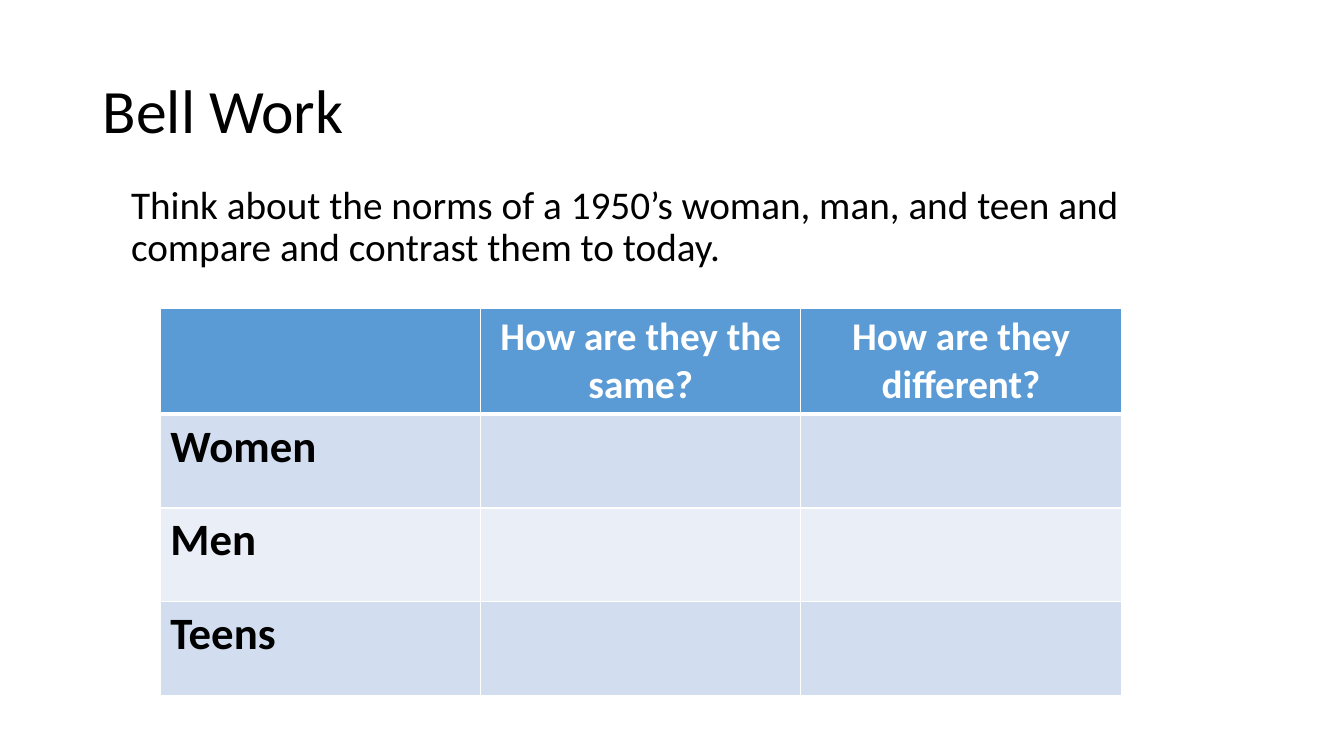
from lxml import etree
from pptx import Presentation
from pptx import util as u
from pptx.dml.color import RGBColor
from pptx.enum import text
from pptx.oxml import ns

BLACK = RGBColor(0x00, 0x00, 0x00)
WHITE = RGBColor(0xFF, 0xFF, 0xFF)
HEADER_BLUE = RGBColor(0x5B, 0x9B, 0xD5)
BAND_DARK = RGBColor(0xD2, 0xDE, 0xEF)
BAND_LIGHT = RGBColor(0xEA, 0xEF, 0xF7)

ROWS = [
    ["", "How are they the same?", "How are they different?"],
    ["Women", "", ""],
    ["Men", "", ""],
    ["Teens", "", ""],
]


def px(n):
    """Length in EMU, at 100 px to the inch."""
    return u.Emu(n * 9144)


class SlideBuilder:
    font = "Calibri"

    def __init__(self, slide):
        self.slide = slide

    def style(self, p, size, color, bold=False, align=text.PP_ALIGN.LEFT):
        p.alignment = align
        for r in p.runs:
            r.font.name = self.font
            r.font.size = u.Pt(size)
            r.font.bold = bold
            r.font.color.rgb = color

    def placeholder(self, idx, box, words, size, anchor):
        """Fill and move a placeholder; return its paragraph."""
        sp = self.slide.placeholders[idx]
        sp.left, sp.top, sp.width, sp.height = map(px, box)
        tf = sp.text_frame
        tf.text = words
        tf.word_wrap = True
        tf.auto_size = text.MSO_AUTO_SIZE.NONE
        tf.vertical_anchor = anchor
        p = tf.paragraphs[0]
        p.line_spacing = 0.9
        self.style(p, size, BLACK)
        return p

    def title(self, box, words):
        self.placeholder(0, box, words, 44, text.MSO_ANCHOR.MIDDLE)

    def body(self, box, words):
        p = self.placeholder(1, box, words, 28, text.MSO_ANCHOR.TOP)
        p.space_before = u.Pt(10)
        pPr = p._p.get_or_add_pPr()
        pPr.set("marL", str(px(3)))
        pPr.set("indent", "0")
        etree.SubElement(pPr, ns.qn("a:buNone"))

    def borders(self, cell, top, bottom):
        """White borders, one point wide at the sides."""
        tcPr = cell._tc.get_or_add_tcPr()
        for side, width in (("L", 1), ("R", 1), ("T", top), ("B", bottom)):
            ln = etree.SubElement(tcPr, ns.qn("a:ln" + side), w=str(u.Pt(width)))
            fill = etree.SubElement(ln, ns.qn("a:solidFill"))
            etree.SubElement(fill, ns.qn("a:srgbClr"), val=str(WHITE))

    def table(self, box, rows, heights):
        frame = self.slide.shapes.add_table(len(rows), len(rows[0]), *map(px, box))
        table = frame.table
        for row, height in zip(table.rows, heights):
            row.height = px(height)
        for i, row in enumerate(rows):
            header = i == 0
            fill = HEADER_BLUE if header else BAND_DARK if i % 2 else BAND_LIGHT
            for j, words in enumerate(row):
                cell = table.cell(i, j)
                self.borders(cell, 3 if i == 1 else 1, 3 if header else 1)
                cell.fill.solid()
                cell.fill.fore_color.rgb = fill
                cell.text_frame.text = words
                p = cell.text_frame.paragraphs[0]
                if header:
                    self.style(p, 28, WHITE, True, text.PP_ALIGN.CENTER)
                else:
                    self.style(p, 32, BLACK, True)


def main():
    prs = Presentation()
    prs.slide_width, prs.slide_height = px(1333), px(750)
    s = SlideBuilder(prs.slides.add_slide(prs.slide_layouts[1]))
    s.title((92, 40, 1150, 145), "Bell Work")
    s.body((117, 179, 1108, 503),
           "Think about the norms of a 1950’s woman, man, and teen and "
           "compare and contrast them to today.")
    s.table((159, 306, 953, 383), ROWS, [104, 93, 93, 93])
    prs.save("out.pptx")


if __name__ == "__main__":
    main()
